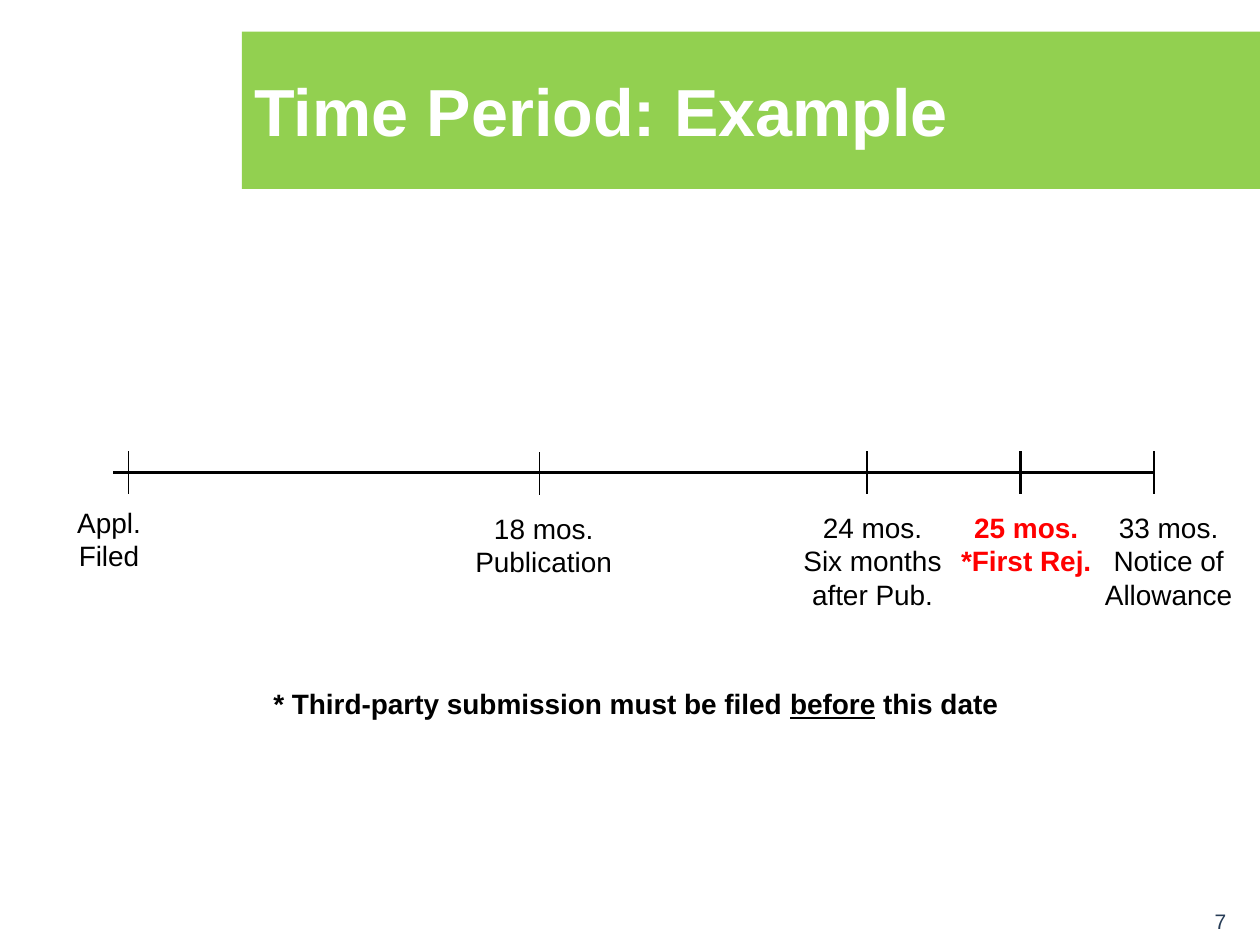
import pptx
import pptx.util
import pptx.dml.color
import pptx.enum.shapes
import pptx.enum.text
import pptx.oxml.ns
from lxml import etree

Inches = pptx.util.Inches
Pt = pptx.util.Pt
RGBColor = pptx.dml.color.RGBColor
ALIGN = pptx.enum.text.PP_ALIGN
ANCHOR = pptx.enum.text.MSO_ANCHOR

GREEN = RGBColor(0x92, 0xD0, 0x50)
WHITE = RGBColor(0xFF, 0xFF, 0xFF)
BLACK = RGBColor(0x00, 0x00, 0x00)
RED = RGBColor(0xFF, 0x00, 0x00)
NAVY = RGBColor(0x27, 0x3C, 0x56)

presentation = pptx.Presentation()
presentation.slide_width = Inches(10)
presentation.slide_height = Inches(7.5)
slide = presentation.slides.add_slide(presentation.slide_layouts[5])


def add_line(x1, y1, x2, y2, width):
    line = slide.shapes.add_connector(
        pptx.enum.shapes.MSO_CONNECTOR.STRAIGHT,
        Inches(x1), Inches(y1), Inches(x2), Inches(y2))
    line.line.color.rgb = BLACK
    line.line.width = Pt(width)
    properties = line._element.spPr
    etree.SubElement(properties, pptx.oxml.ns.qn("a:effectLst"))


def add_text(left, top, width, height, text, color=BLACK, bold=False,
             size=16, align=ALIGN.CENTER):
    box = slide.shapes.add_textbox(
        Inches(left), Inches(top), Inches(width), Inches(height))
    frame = box.text_frame
    frame.word_wrap = True
    frame.text = text
    for paragraph in frame.paragraphs:
        paragraph.alignment = align
        for run in paragraph.runs:
            run.font.name = "Arial"
            run.font.size = Pt(size)
            run.font.bold = bold
            run.font.color.rgb = color
    return frame


# Title banner
title = slide.shapes.title
title.left, title.top = Inches(1.92), Inches(0.25)
title.width, title.height = Inches(8.08), Inches(1.25)
title.fill.solid()
title.fill.fore_color.rgb = GREEN
title.text_frame.text = "Time Period: Example"
title.text_frame.vertical_anchor = ANCHOR.MIDDLE
title_paragraph = title.text_frame.paragraphs[0]
title_paragraph.alignment = ALIGN.LEFT
title_font = title_paragraph.runs[0].font
title_font.name = "Arial"
title_font.size = Pt(38)
title_font.bold = True
title_font.color.rgb = WHITE

# Timeline axis
add_line(0.9, 3.75, 9.16, 3.75, 2)

# Milestones: tick x, tick top, tick weight, label box, label, color, bold
milestones = [
    (1.02, 3.58, 0.75, (-0.03, 3.96, 1.79, 0.64), "Appl.\nFiled", BLACK, False),
    (4.28, 3.59, 0.75, (3.38, 4.01, 1.87, 0.64), "18 mos.\nPublication", BLACK, False),
    (6.88, 3.58, 0.75, (5.99, 4, 1.87, 0.91), "24 mos.\nSix months\nafter Pub.", BLACK, False),
    (8.1, 3.58, 1.5, (7.21, 4, 1.87, 0.64), "25 mos.\n*First Rej.", RED, True),
    (9.16, 3.58, 0.75, (8.34, 4, 1.87, 0.91), "33 mos.\nNotice of Allowance", BLACK, False),
]
for x, tick_top, weight, label_box, label, color, bold in milestones:
    add_line(x, tick_top, x, tick_top + 0.34, weight)
    add_text(*label_box, label, color, bold)

# Footnote with one underlined word
footnote = add_text(1.75, 5.4, 6.59, 0.37,
                    "* Third-party submission must be filed ", bold=True)
footnote.vertical_anchor = ANCHOR.MIDDLE
for text, underline in [("before", True), (" this date", False)]:
    run = footnote.paragraphs[0].add_run()
    run.text = text
    run.font.name = "Arial"
    run.font.size = Pt(16)
    run.font.bold = True
    run.font.underline = underline
    run.font.color.rgb = BLACK

# Page number
page_number = add_text(7.75, 6.92, 2.08, 0.5, "7", NAVY, size=12, align=ALIGN.RIGHT)
page_number.vertical_anchor = ANCHOR.BOTTOM
page_number.margin_bottom = Inches(0.01)

presentation.save("out.pptx")
